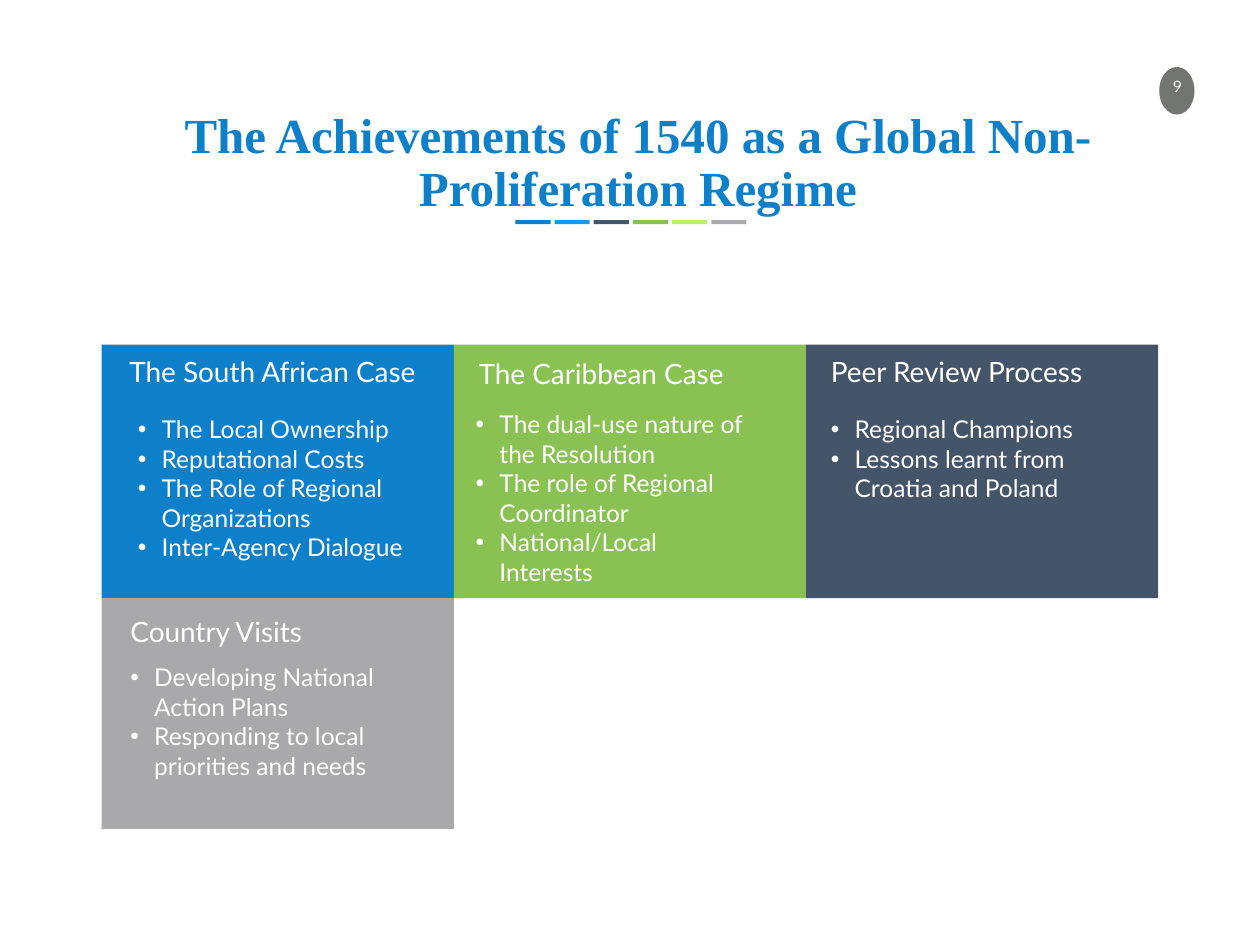
"""Build the slide on the achievements of 1540 as a global regime."""
from pptx import Presentation
from pptx.dml.color import RGBColor
from pptx.enum.shapes import MSO_SHAPE as Shape
from pptx.enum.text import MSO_AUTO_SIZE as Fit, PP_ALIGN as Align
from pptx.oxml.xmlchemy import OxmlElement as Element
from pptx.util import Cm, Pt

TITLE = "The Achievements of 1540 as a Global Non-Proliferation Regime"
PAGE_NUMBER = "9"

THEME = {
    "blue": "0E80C9", "sky": "119CF4", "navy": "445469", "green": "8AC153",
    "lime": "BAEF69", "grey": "A9A8AB", "badge": "737572",
    "title": {"size": Pt(28), "name": "Times New Roman", "bold": True, "color": "0E80C9"},
    "heading": {"size": Pt(16), "name": "Lato", "color": "FFFFFF"},
    "bullet": {"size": Pt(14), "name": "Lato", "color": "FFFFFF"},
    "number": {"size": Pt(9), "name": "Lato", "color": "F2F2F2"},
}

CARDS = [
    {"fill": "blue", "column": 0, "row": 0, "heading": "The South African Case",
     "heading_at": (0.31, 0.08, 6.6), "list_at": (0, 1.28, 6.91), "level": 1,
     "bullets": ["The Local Ownership", "Reputational Costs",
                 "The Role of Regional Organizations", "Inter-Agency Dialogue"]},
    {"fill": "grey", "column": 0, "row": 1, "heading": "Country Visits",
     "heading_at": (0.33, 0.2, 5.51), "list_at": (0.33, 1.17, 5.51), "level": 0,
     "bullets": ["Developing National Action Plans",
                 "Responding to local priorities and needs"]},
    {"fill": "green", "column": 1, "row": 0, "heading": "The Caribbean Case",
     "heading_at": (0.25, 0.11, 6.65), "list_at": (0.19, 1.18, 6.1), "level": 0,
     "bullets": ["The dual-use nature of the Resolution",
                 "The role of Regional Coordinator", "National/Local Interests"]},
    {"fill": "navy", "column": 2, "row": 0, "heading": "Peer Review Process",
     "heading_at": (0.25, 0.08, 6.15), "list_at": (0.25, 1.28, 5.51), "level": 0,
     "bullets": ["Regional Champions", "Lessons learnt from Croatia and Poland"]},
]
CARD_LEFT, CARD_WIDTH = 2.05, 7.1
ROWS = [(6.95, 5.11), (12.06, 4.65)]
STRIPES = ["blue", "sky", "navy", "green", "lime", "grey"]
STRIPE_LEFT, STRIPE_TOP, STRIPE_STEP = 10.39, 4.44, 0.79
STRIPE_SIZE = (0.71, 0.08)
INDENT = 0.48


def add_block(page, kind, area, color):
    block = page.shapes.add_shape(kind, *map(Cm, area))
    block.shadow.inherit = False
    block.fill.solid()
    block.fill.fore_color.rgb = RGBColor.from_string(THEME[color])
    block.line.fill.background()


def add_text(page, area, lines, style, align=Align.LEFT, wrap=True, spacing=None):
    box = page.shapes.add_textbox(*map(Cm, area))
    frame = box.text_frame
    frame.word_wrap, frame.auto_size = wrap, Fit.SHAPE_TO_FIT_TEXT
    for index, line in enumerate(lines):
        para = frame.add_paragraph() if index else frame.paragraphs[0]
        para.alignment, para.line_spacing = align, spacing
        span = para.add_run()
        span.text = line
        for key, value in THEME[style].items():
            if key == "color":
                span.font.color.rgb = RGBColor.from_string(value)
            else:
                setattr(span.font, key, value)
    return frame


def add_bullets(frame, level):
    for para in frame.paragraphs:
        para.level = level
        props = para._p.get_or_add_pPr()
        props.set("marL", str(Cm(INDENT * (level + 1))))
        props.set("indent", str(Cm(-INDENT)))
        for tag, key, value in (("a:buFont", "typeface", "Arial"), ("a:buChar", "char", "•")):
            mark = Element(tag)
            mark.set(key, value)
            props.append(mark)


def add_card(page, card):
    left = CARD_LEFT + card["column"] * CARD_WIDTH
    top, height = ROWS[card["row"]]
    add_block(page, Shape.RECTANGLE, (left, top, CARD_WIDTH, height), card["fill"])
    x, y, width = card["heading_at"]
    add_text(page, (left + x, top + y, width, 0.94), [card["heading"]], "heading")
    x, y, width = card["list_at"]
    area = (left + x, top + y, width, height - y - 0.5)
    add_bullets(add_text(page, area, card["bullets"], "bullet"), card["level"])


def main():
    deck = Presentation()
    deck.slide_width, deck.slide_height = Cm(25.4), Cm(19.05)
    page = deck.slides.add_slide(deck.slide_layouts[6])
    add_block(page, Shape.OVAL, (23.37, 1.35, 0.71, 0.96), "badge")
    number = add_text(page, (23.34, 1.45, 0.79, 0.58), [PAGE_NUMBER], "number",
                      Align.CENTER, wrap=False)
    for side, inset in {"left": 0.2, "right": 0.2, "top": 0.1, "bottom": 0.1}.items():
        setattr(number, f"margin_{side}", Cm(inset))
    for card in CARDS:
        add_card(page, card)
    add_text(page, (3.07, 2.11, 19.58, 2.41), [TITLE], "title", Align.CENTER, spacing=0.9)
    for index, color in enumerate(STRIPES):
        left = STRIPE_LEFT + index * STRIPE_STEP
        add_block(page, Shape.RECTANGLE, (left, STRIPE_TOP, *STRIPE_SIZE), color)
    deck.save("out.pptx")


if __name__ == "__main__":
    main()
